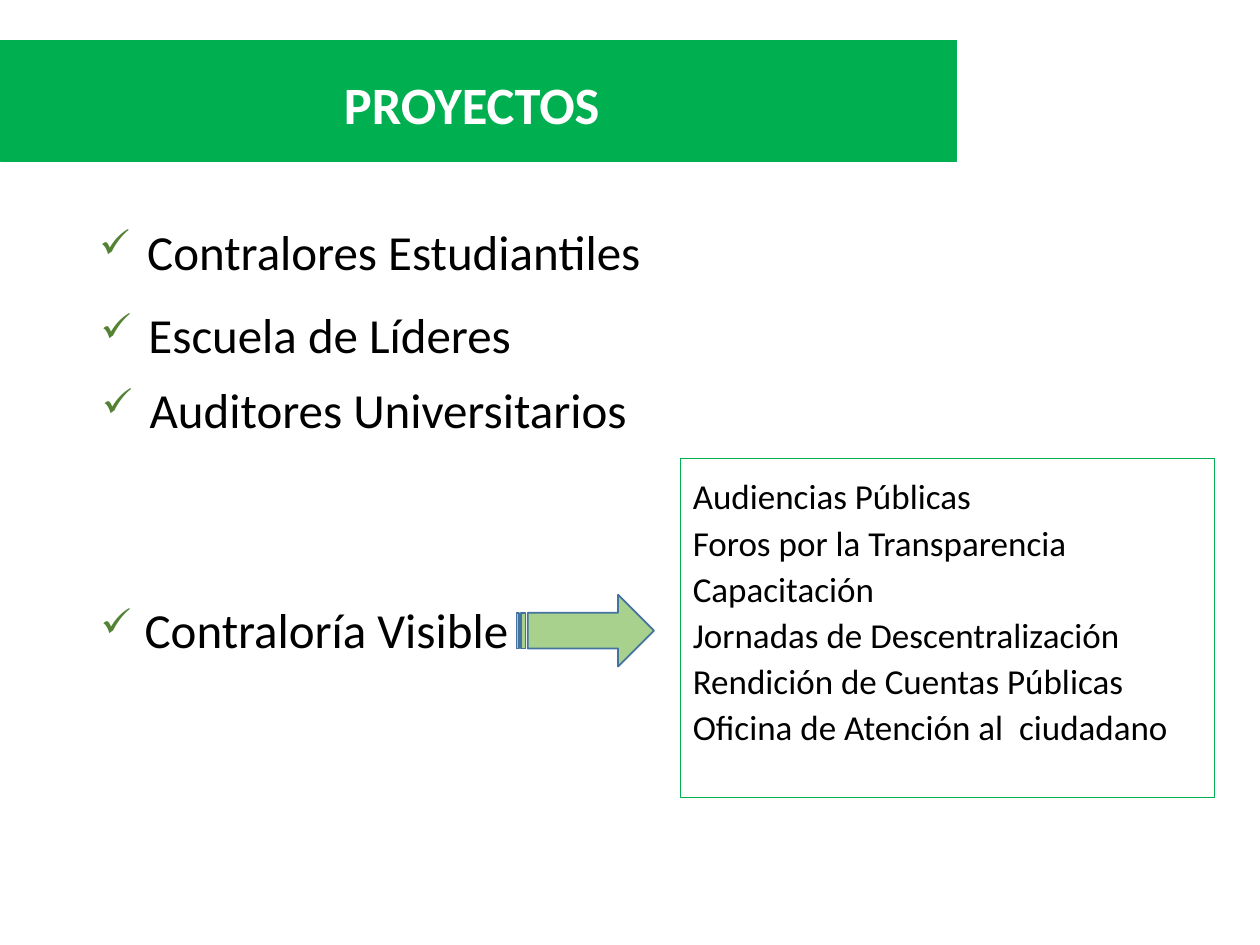
from lxml.etree import SubElement
from pptx import Presentation
from pptx.dml.color import RGBColor
from pptx.enum.shapes import MSO_SHAPE as Shape
from pptx.enum.text import MSO_ANCHOR as Anchor, PP_ALIGN as Align
from pptx.oxml.ns import qn
from pptx.util import Inches, Pt

FONT = "Calibri"
GREEN = "00B050"
BLACK = "000000"
LINES = [
    "Audiencias Públicas",
    "Foros por la Transparencia",
    "Capacitación",
    "Jornadas de Descentralización",
    "Rendición de Cuentas Públicas",
    "Oficina de Atención al  ciudadano",
]
ITEMS = [
    ("Contralores Estudiantiles", 0.69, 1.74, 4.75, 0.45, 0.38, 1.1),
    ("Escuela de Líderes", 0.7, 2.4, 3.48, 0.45, 0.38, 1.1),
    ("Auditores Universitarios", 0.71, 3, 4.47, 0.45, 0.38, 1.1),
    ("Contraloría Visible", 0.7, 4.71, 3.51, 0.57, 0.35, 1),
]


def color(code):
    """Turn a hex string into a colour."""
    return RGBColor.from_string(code)


def add_box(slide, kind, area, fill, line, width):
    """Add a preset shape with a flat fill and outline."""
    box = slide.shapes.add_shape(kind, *map(Inches, area))
    box.shadow.inherit = False
    if fill:
        box.fill.solid()
        box.fill.fore_color.rgb = color(fill)
    else:
        box.fill.background()
    box.line.color.rgb = color(line)
    box.line.width = Pt(width)
    return box


def set_text(frame, text, size, code, align=Align.LEFT, space=1.1, bold=False):
    """Write text in a frame and format its paragraphs."""
    frame.text = text
    frame.vertical_anchor = Anchor.MIDDLE
    for para in frame.paragraphs:
        para.alignment = align
        para.line_spacing = space
        for run in para.runs:
            font = run.font
            font.name, font.size, font.bold = FONT, Pt(size), bold
            font.color.rgb = color(code)


def add_check(para, indent):
    """Give a paragraph a green check mark and a hanging indent."""
    props = para._p.get_or_add_pPr()
    props.set("marL", str(Inches(indent)))
    props.set("indent", str(-Inches(indent)))
    tint = SubElement(props, qn("a:buClr"))
    SubElement(tint, qn("a:srgbClr")).set("val", "548235")
    SubElement(props, qn("a:buSzPct")).set("val", "80000")
    SubElement(props, qn("a:buChar")).set("char", "✓")


def add_item(slide, text, left, top, width, height, indent, space):
    """Add one project with its check mark."""
    area = map(Inches, (left, top, width, height))
    frame = slide.shapes.add_textbox(*area).text_frame
    frame.word_wrap = height < 0.5
    set_text(frame, text, 28, BLACK, space=space)
    add_check(frame.paragraphs[0], indent)


def add_title(slide):
    """Add the title band."""
    band = add_box(slide, Shape.RECTANGLE, (0, 0.32, 7.59, 0.96), GREEN, GREEN, 0.5)
    band.text_frame.margin_right = Inches(0.2)
    set_text(band.text_frame, "PROYECTOS", 30, "FFFFFF", Align.CENTER, bold=True)


def add_panel(slide):
    """Add the outlined list of activities."""
    panel = add_box(slide, Shape.RECTANGLE, (5.4, 3.64, 4.24, 2.69), None, GREEN, 0.5)
    panel.text_frame.margin_bottom = Inches(0.35)
    set_text(panel.text_frame, "\n".join(LINES), 20, BLACK)


def main():
    """Build and save the slide."""
    deck = Presentation()
    deck.slide_width, deck.slide_height = Inches(10), Inches(7.5)
    slide = deck.slides.add_slide(deck.slide_layouts[6])
    add_title(slide)
    for item in ITEMS:
        add_item(slide, *item)
    add_panel(slide)
    arrow = (4.1, 4.72, 1.09, 0.57)
    add_box(slide, Shape.STRIPED_RIGHT_ARROW, arrow, "A9D18E", "43739E", 1)
    deck.save("out.pptx")


if __name__ == "__main__":
    main()
